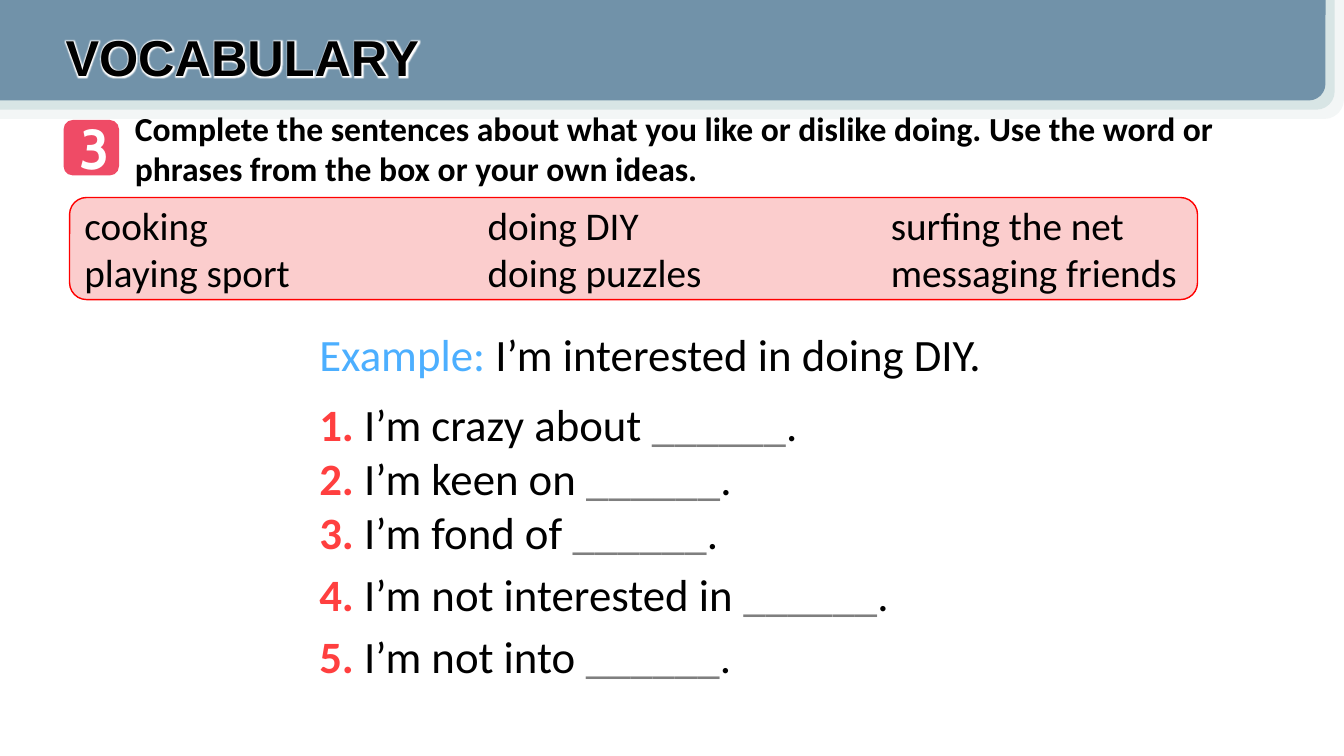
from lxml import etree
from pptx import Presentation
from pptx.dml.color import RGBColor
from pptx.enum.shapes import MSO_SHAPE
from pptx.enum.text import MSO_ANCHOR, MSO_AUTO_SIZE, PP_ALIGN
from pptx.oxml.ns import qn
from pptx.util import Pt

ROUNDED = MSO_SHAPE.ROUNDED_RECTANGLE
ONE_ROUND_CORNER = MSO_SHAPE.ROUND_1_RECTANGLE
TOP, MIDDLE = MSO_ANCHOR.TOP, MSO_ANCHOR.MIDDLE
LEFT, CENTER = PP_ALIGN.LEFT, PP_ALIGN.CENTER
NO_FIT = MSO_AUTO_SIZE.NONE

COLORS = {
    "black": "000000", "white": "FFFFFF", "blank": "7F7F7F",
    "band_outer": "F3F6F6", "band_middle": "D8E5E5", "band_inner": "7192A9",
    "badge": "EF4B66", "box_fill": "FBCDCD", "box_line": "FF0000",
    "example": "4CAFFF", "number": "FF3F3F",
}

TITLE = "VOCABULARY"
TASK_NUMBER = "3"
TASK = ("Complete the sentences about what you like or dislike doing. "
        "Use the word or phrases from the box or your own ideas.")
WORD_ROWS = [
    ("cooking", "doing DIY", "surfing the net"),
    ("playing sport", "doing puzzles", "messaging friends"),
]
EXAMPLE = ("Example: ", "I’m interested in doing DIY.")
SENTENCE_GROUPS = [
    ["I’m crazy about ", "I’m keen on ", "I’m fond of "],
    ["I’m not interested in "],
    ["I’m not into "],
]
BLANK = "______"

SLIDE_WIDTH, SLIDE_HEIGHT = 960, 540
BAND_COLORS = ["band_outer", "band_middle", "band_inner"]
BAND_WIDTH, BAND_HEIGHT, BAND_STEP = 953.2, 85, 6.6
WORD_COLUMN = 288


def rgb(name):
    return RGBColor.from_string(COLORS[name])


def add_span(para, text, size, color="black", bold=False, font="Calibri"):
    span = para.add_run()
    span.text = text
    look = {"name": font, "size": Pt(size), "bold": bold}
    for key, value in look.items():
        setattr(span.font, key, value)
    span.font.color.rgb = rgb(color)
    return span


def set_frame(shape, anchor=TOP):
    look = {"word_wrap": True, "auto_size": NO_FIT, "vertical_anchor": anchor}
    for key, value in look.items():
        setattr(shape.text_frame, key, value)
    return shape.text_frame


def add_text_box(slide, *place):
    return set_frame(slide.shapes.add_textbox(*map(Pt, place)))


def add_panel(slide, kind, place, fill, line=None):
    panel = slide.shapes.add_shape(kind, *map(Pt, place))
    panel.shadow.inherit = False
    panel.fill.solid()
    panel.fill.fore_color.rgb = rgb(fill)
    if line:
        panel.line.color.rgb = rgb(line)
        panel.line.width = Pt(1)
    else:
        panel.line.fill.background()
    return panel


def next_para(frame):
    """Return the empty first paragraph, or a new one after it."""
    first = frame.paragraphs[0]
    return frame.add_paragraph() if first.runs else first


def add_tab_stops(para, positions):
    stops = etree.SubElement(para._p.get_or_add_pPr(), qn("a:tabLst"))
    for position in positions:
        etree.SubElement(stops, qn("a:tab"), pos=str(Pt(position)), algn="l")


def add_glow(span, color, radius):
    effects = etree.Element(qn("a:effectLst"))
    glow = etree.SubElement(effects, qn("a:glow"), rad=str(Pt(radius)))
    etree.SubElement(glow, qn("a:srgbClr"), val=COLORS[color])
    span._r.rPr.find(qn("a:solidFill")).addnext(effects)


def add_header(slide):
    for index, color in enumerate(BAND_COLORS):
        inset = index * BAND_STEP
        place = (0, 0, SLIDE_WIDTH - index * BAND_STEP, BAND_HEIGHT - inset)
        band = add_panel(slide, ONE_ROUND_CORNER, place, color)
        band._element.spPr.xfrm.set("flipV", "1")


def add_title(slide):
    title = slide.shapes.title
    place = {"left": 39.6, "top": 15.1, "width": 325.4, "height": 51}
    for key, value in place.items():
        setattr(title, key, Pt(value))
    para = set_frame(title).paragraphs[0]
    para.alignment = LEFT
    span = add_span(para, TITLE, 36, bold=True, font="Arial")
    add_glow(span, "white", 3)
    slide.shapes._spTree.append(title._element)


def add_task(slide):
    frame = add_text_box(slide, 89.3, 73.4, 837.4, 65.5)
    add_span(frame.paragraphs[0], TASK, 24, bold=True)
    add_panel(slide, ROUNDED, (45.4, 85.7, 39.6, 39.6), "badge")
    para = add_text_box(slide, 49.7, 77.8, 31, 55.4).paragraphs[0]
    para.alignment = CENTER
    add_span(para, TASK_NUMBER, 40, "white", True, "Cabin")


def add_sentences(slide):
    frame = add_text_box(slide, 221, 229.7, 573, 264.2)
    para = next_para(frame)
    para.space_after = Pt(12)
    add_span(para, EXAMPLE[0], 32, "example")
    add_span(para, EXAMPLE[1], 32)
    number = 0
    for group in SENTENCE_GROUPS:
        para = next_para(frame)
        para.space_after = Pt(6)
        for index, opening in enumerate(group):
            if index:
                para.add_line_break()
            number += 1
            add_span(para, f"{number}. ", 32, "number", True)
            add_span(para, opening, 32)
            add_span(para, BLANK, 32, "blank")
            add_span(para, ".", 32)


def add_word_box(slide):
    place = (49.7, 141.1, 805.7, 72.9)
    box = add_panel(slide, ROUNDED, place, "box_fill", "box_line")
    frame = set_frame(box, MIDDLE)
    for words in WORD_ROWS:
        para = next_para(frame)
        para.alignment = LEFT
        add_tab_stops(para, [WORD_COLUMN * n for n in range(1, len(words))])
        add_span(para, "\t".join(words), 28)


def main():
    deck = Presentation()
    deck.slide_width, deck.slide_height = Pt(SLIDE_WIDTH), Pt(SLIDE_HEIGHT)
    slide = deck.slides.add_slide(deck.slide_layouts[5])
    add_header(slide)
    add_task(slide)
    add_sentences(slide)
    add_word_box(slide)
    add_title(slide)
    deck.save("out.pptx")


if __name__ == "__main__":
    main()
